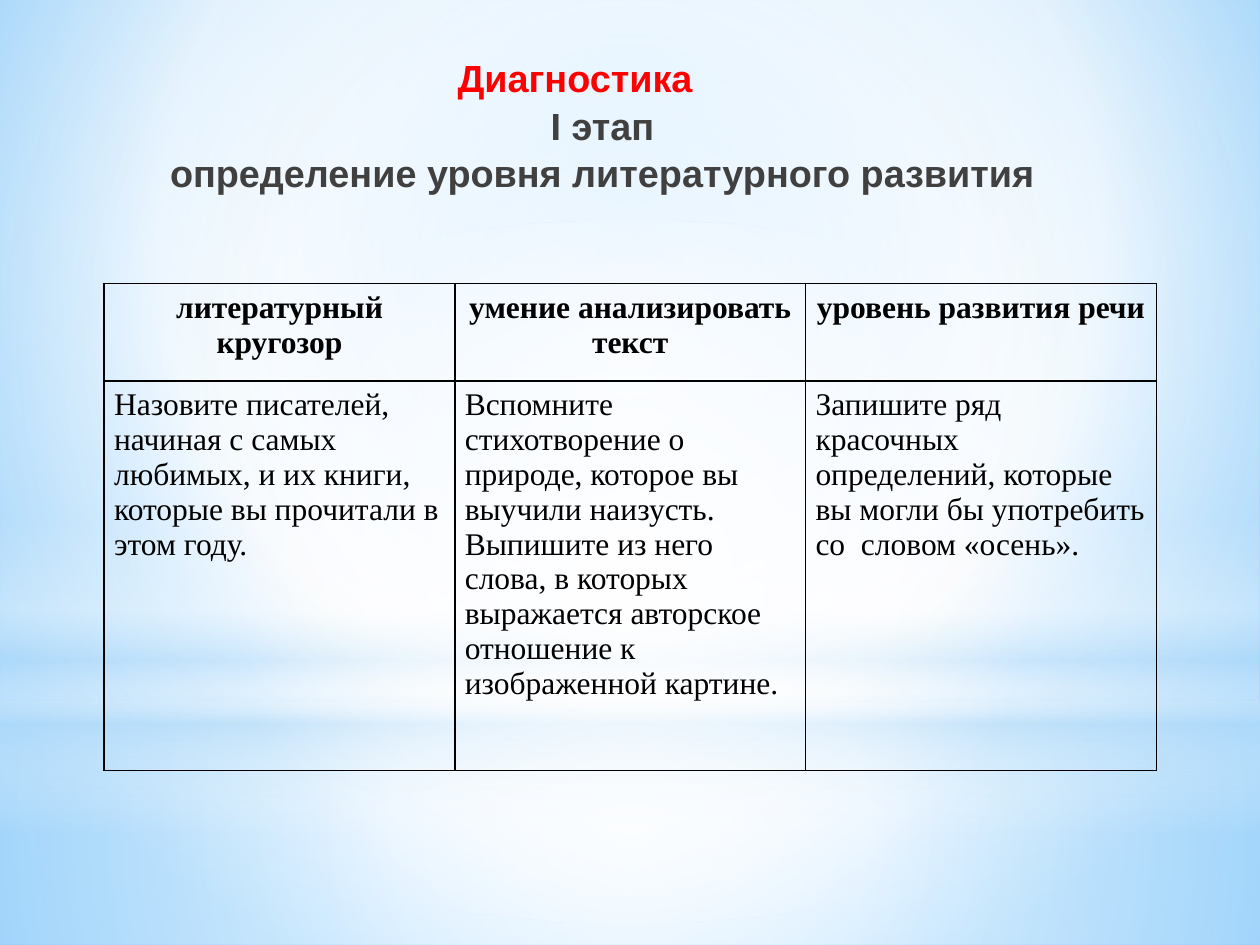
from copy import deepcopy
from dataclasses import dataclass

from lxml.etree import SubElement as Sub, Element
from pptx import Presentation
from pptx.dml.color import RGBColor as Rgb
from pptx.enum.shapes import MSO_SHAPE as Kind
from pptx.enum.text import MSO_ANCHOR as Anchor, MSO_AUTO_SIZE as Fit, PP_ALIGN as Align
from pptx.oxml.ns import qn
from pptx.util import Cm, Pt


@dataclass(frozen=True)
class Theme:
    red: str = "FF0000"
    gray: str = "404040"
    black: str = "000000"
    white: str = "FFFFFF"
    pale: str = "B4DCFA"
    sky: str = "9ED5FF"
    deep: str = "5BB9FF"
    head: str = "Arial"
    body: str = "Times New Roman"
    head_size: float = 21.6
    body_size: float = 18
    rule: float = 1


T = Theme()
WIDE, HIGH = 25.4, 19.05
MID = (50, 50, 50, 50)

TITLE = "Диагностика \vI этап\vопределение уровня литературного развития"
ROWS = [
    ["литературный кругозор", "умение анализировать текст", "уровень развития речи"],
    [
        "Назовите писателей, начиная с самых любимых, и их книги, "
        "которые вы прочитали в этом году.",
        "Вспомните стихотворение о природе, которое вы выучили наизусть. "
        "Выпишите из него слова, в которых выражается авторское отношение "
        "к изображенной картине.",
        "Запишите ряд красочных определений, которые вы могли бы употребить "
        "со  словом «осень».",
    ],
]
TALL = [1.96, 7.85]

# Soft light layers: kind, top, height, stops (position, colour, opacity), centre
GLOW = [
    (Kind.RECTANGLE, 14.17, 4.88,
     [(0, T.white, 91), (37, T.white, 76), (100, T.pale, 79)], MID),
    (Kind.RECTANGLE, 0, 14.17,
     [(0, T.white, 89), (48, T.white, 62), (100, T.pale, 79)], MID),
    (Kind.RECTANGLE, 10.46, 6.35,
     [(0, T.white, 0), (29, T.white, 30), (45, T.pale, 40),
      (55, T.white, 26), (65, T.pale, 60), (100, T.white, 0)], None),
    (Kind.OVAL, 4.45, 14.17, [(0, T.white, 100), (56, T.white, 0)], MID),
]


def blend(root, stops, focus):
    """Swap the first solid fill under root for a gradient."""
    grad = Element(qn("a:gradFill"), rotWithShape="1")
    items = Sub(grad, qn("a:gsLst"))
    for pos, color, alpha in stops:
        stop = Sub(items, qn("a:gs"), pos=str(pos * 1000))
        tint = Sub(stop, qn("a:srgbClr"), val=color)
        if alpha < 100:
            Sub(tint, qn("a:alpha"), val=str(alpha * 1000))
    if focus:
        way = Sub(grad, qn("a:path"), path="circle")
        sides = {side: str(v * 1000) for side, v in zip("ltrb", focus)}
        Sub(way, qn("a:fillToRect"), sides)
    else:
        Sub(grad, qn("a:lin"), ang="5400000", scaled="0")
    old = root.find(".//" + qn("a:solidFill"))
    old.getparent().replace(old, grad)


def style(run, face, size, color, bold):
    font = run.font
    font.name, font.size, font.bold = face, Pt(size), bold
    font.color.rgb = Rgb.from_string(color)


def add_glow(slide, kind, top, high, stops, focus):
    shape = slide.shapes.add_shape(kind, 0, Cm(top), Cm(WIDE), Cm(high))
    shape.shadow.inherit = False
    shape.line.fill.background()
    shape.fill.solid()
    blend(shape.element, stops, focus)


def set_title(slide):
    title = slide.shapes.title
    title.left, title.top = Cm(1.5), Cm(0.91)
    title.width, title.height = Cm(20.4), Cm(3.18)
    frame = title.text_frame
    frame.word_wrap, frame.auto_size = True, Fit.NONE
    frame.vertical_anchor = Anchor.MIDDLE
    para = frame.paragraphs[0]
    para.text = TITLE
    para.alignment, para.line_spacing = Align.CENTER, 1.05
    # Hanging indent
    props = para._p.get_or_add_pPr()
    props.set("marL", str(Cm(0.89)))
    props.set("indent", str(Cm(-0.89)))
    for run, color in zip(para.runs, (T.red, T.gray, T.gray)):
        style(run, T.head, T.head_size, color, True)
    # Line breaks take the type size of the runs
    look = title.element.find(".//" + qn("a:rPr"))
    for gap in title.element.iter(qn("a:br")):
        gap.append(deepcopy(look))
    # Title stands in front of the light layers
    title.element.getparent().append(title.element)


def edge(cell):
    props = cell._tc.get_or_add_tcPr()
    for i, side in enumerate(("lnL", "lnR", "lnT", "lnB")):
        line = Element(qn("a:" + side), w=str(Pt(T.rule)))
        Sub(Sub(line, qn("a:solidFill")), qn("a:srgbClr"), val=T.black)
        props.insert(i, line)


def fill_cell(cell, text, head):
    cell.fill.background()
    edge(cell)
    cell.margin_left = cell.margin_right = Cm(0.2)
    cell.margin_top = cell.margin_bottom = Cm(0.13)
    para = cell.text_frame.paragraphs[0]
    para.text = text
    para.alignment = Align.CENTER if head else Align.LEFT
    style(para.runs[0], T.body, T.body_size, T.black, head)


def add_grid(slide):
    frame = slide.shapes.add_table(len(ROWS), len(ROWS[0]), Cm(2.1), Cm(5.72),
                                   Cm(21.21), Cm(sum(TALL)))
    table = frame.table
    table.first_row = table.horz_banding = False
    for col in table.columns:
        col.width = Cm(7.07)
    for r, (texts, tall) in enumerate(zip(ROWS, TALL)):
        table.rows[r].height = Cm(tall)
        for c, text in enumerate(texts):
            fill_cell(table.cell(r, c), text, r == 0)


def main():
    deck = Presentation()
    deck.slide_width, deck.slide_height = Cm(WIDE), Cm(HIGH)
    slide = deck.slides.add_slide(deck.slide_layouts[5])
    # Backdrop
    slide.background.fill.solid()
    blend(slide.element.find(".//" + qn("p:bgPr")),
          [(0, T.sky, 100), (60, T.white, 100), (100, T.deep, 100)],
          (20, 10, 20, 60))
    for layer in GLOW:
        add_glow(slide, *layer)
    # Content
    set_title(slide)
    add_grid(slide)
    deck.save("out.pptx")


if __name__ == "__main__":
    main()
